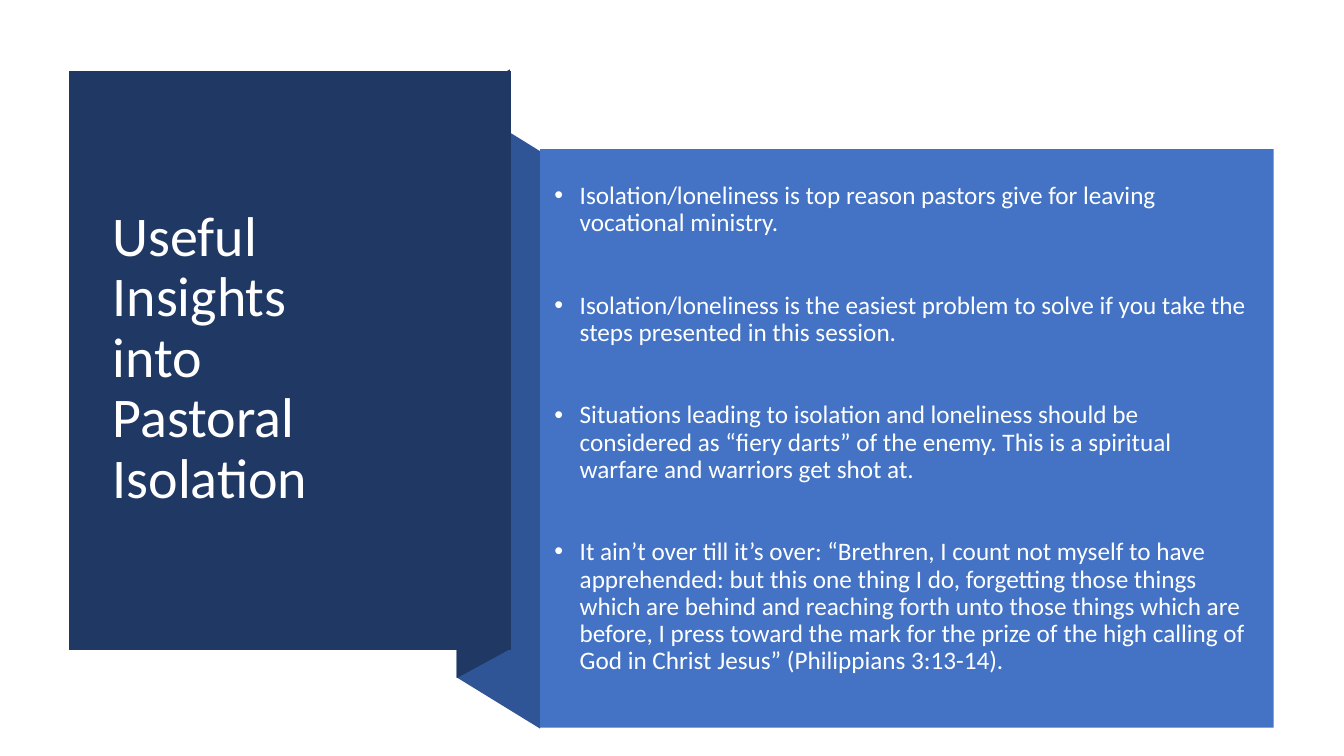
from dataclasses import dataclass

from lxml import etree
from pptx import Presentation
from pptx.dml.color import RGBColor
from pptx.enum.shapes import MSO_SHAPE
from pptx.enum.text import MSO_ANCHOR, PP_ALIGN
from pptx.oxml.ns import qn
from pptx.util import Cm, Pt

RECTANGLE = MSO_SHAPE.RECTANGLE
MIDDLE = MSO_ANCHOR.MIDDLE
LEFT = PP_ALIGN.LEFT

NAVY, FOLD_BLUE, PANEL_BLUE = "203864", "2F5597", "4472C4"
TITLE_WHITE, BODY_WHITE = "FFFFFF", "FEFFFF"
FONT = "Calibri"
BULLET_INDENT = Cm(0.64)
INSIGHT_GAP = Pt(39.5)

FRAME_FORMAT = {"word_wrap": True, "vertical_anchor": MIDDLE}
PARAGRAPH_FORMAT = {"alignment": LEFT, "line_spacing": 0.9}


@dataclass
class Facet:
    corners: list[tuple[float, float]]
    color: str


@dataclass
class Box:
    left: float
    top: float
    width: float
    height: float

    def lengths(self) -> list[int]:
        return [Cm(v) for v in (self.left, self.top, self.width, self.height)]


@dataclass
class TextBlock:
    box: Box
    paragraphs: list[str]
    size: float
    color: str
    bulleted: bool = False


# Ribbon facets, from back to front
FACETS = [
    Facet([(13.61, 18.36), (11.51, 17.07), (11.51, 2.51), (13.61, 3.81)], FOLD_BLUE),
    Facet([(12.85, 16.36), (11.51, 17.09), (11.51, 2.49), (12.85, 1.75)], NAVY),
    Facet([(1.75, 1.78), (12.88, 1.78), (12.88, 16.38), (1.75, 16.38)], NAVY),
]
INSIGHTS_PANEL = Box(13.61, 3.76, 18.49, 14.58)

TITLE = TextBlock(
    Box(2.59, 2.72, 9.42, 12.67),
    ["Useful\vInsights\vinto\vPastoral Isolation"],
    40,
    TITLE_WHITE,
)
INSIGHTS = TextBlock(
    Box(13.72, 3.76, 18.14, 14.1),
    [
        "Isolation/loneliness is top reason pastors give for leaving vocational ministry.",
        "Isolation/loneliness is the easiest problem to solve if you take the steps "
        "presented in this session.",
        "Situations leading to isolation and loneliness should be considered as "
        "“fiery darts” of the enemy. This is a spiritual warfare and warriors get shot at.",
        "It ain’t over till it’s over: “Brethren, I count not myself to have apprehended: "
        "but this one thing I do, forgetting those things which are behind and reaching "
        "forth unto those things which are before, I press toward the mark for the prize "
        "of the high calling of God in Christ Jesus” (Philippians 3:13-14).",
    ],
    18,
    BODY_WHITE,
    bulleted=True,
)


def rgb(color: str) -> RGBColor:
    return RGBColor.from_string(color)


def apply_format(target, values: dict) -> None:
    for name, value in values.items():
        setattr(target, name, value)


def paint(shape, color: str) -> None:
    shape.fill.solid()
    shape.fill.fore_color.rgb = rgb(color)
    shape.line.fill.background()
    shape.shadow.inherit = False


def draw_facet(slide, facet: Facet) -> None:
    start, *others = [(Cm(x), Cm(y)) for x, y in facet.corners]
    builder = slide.shapes.build_freeform(*start, scale=1.0)
    builder.add_line_segments(others, close=True)
    paint(builder.convert_to_shape(), facet.color)


def add_bullet(paragraph) -> None:
    properties = paragraph._p.get_or_add_pPr()
    properties.set("marL", str(BULLET_INDENT))
    properties.set("indent", str(-BULLET_INDENT))
    font = etree.SubElement(properties, qn("a:buFont"))
    font.set("typeface", "Arial")
    etree.SubElement(properties, qn("a:buChar")).set("char", "•")


def draw_text(slide, block: TextBlock) -> None:
    frame = slide.shapes.add_textbox(*block.box.lengths()).text_frame
    apply_format(frame, FRAME_FORMAT)
    for index, text in enumerate(block.paragraphs):
        paragraph = frame.add_paragraph() if index else frame.paragraphs[0]
        paragraph.text = text
        apply_format(paragraph, PARAGRAPH_FORMAT)
        paragraph.space_before = INSIGHT_GAP if index else Pt(0)
        if block.bulleted:
            add_bullet(paragraph)
        for run in paragraph.runs:
            apply_format(run.font, {"name": FONT, "size": Pt(block.size)})
            run.font.color.rgb = rgb(block.color)


def main() -> None:
    deck = Presentation()
    apply_format(deck, {"slide_width": Cm(33.87), "slide_height": Cm(19.05)})
    slide = deck.slides.add_slide(deck.slide_layouts[6])

    # Folded ribbon with the title
    for facet in FACETS:
        draw_facet(slide, facet)
    draw_text(slide, TITLE)

    # Panel with the insights
    paint(slide.shapes.add_shape(RECTANGLE, *INSIGHTS_PANEL.lengths()), PANEL_BLUE)
    draw_text(slide, INSIGHTS)

    deck.save("out.pptx")


if __name__ == "__main__":
    main()
